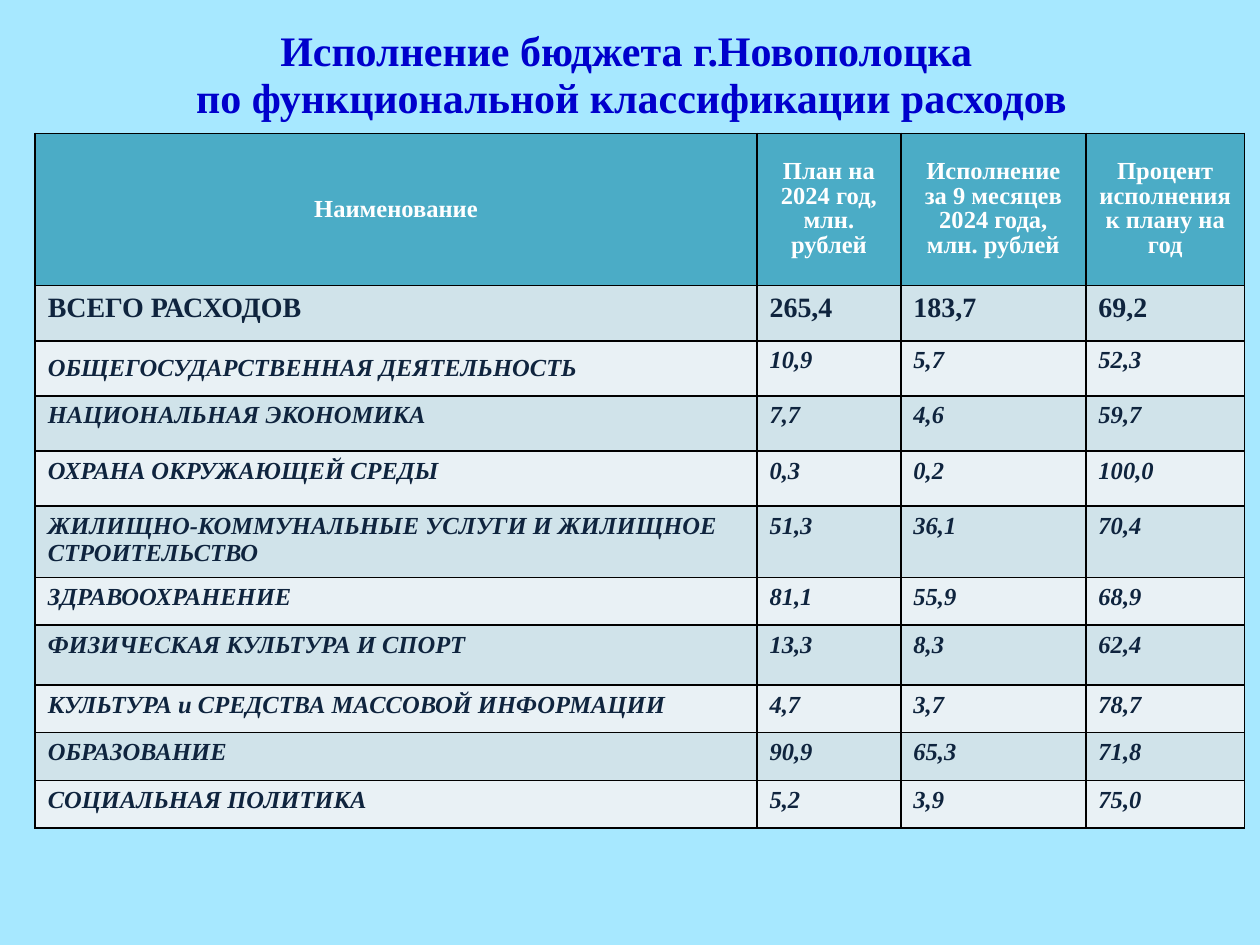
import pptx
import pptx.util
import pptx.dml.color
import pptx.enum.text
import pptx.oxml
import pptx.oxml.ns
from pptx.util import Cm, Pt

ALIGN = pptx.enum.text.PP_ALIGN
ANCHOR = pptx.enum.text.MSO_ANCHOR


def rgb(value):
    return pptx.dml.color.RGBColor.from_string(value)


def set_font(p, size, color, italic=False):
    p.font.name = "Times New Roman"
    p.font.size = Pt(size)
    p.font.bold = True
    p.font.italic = italic
    p.font.color.rgb = rgb(color)


prs = pptx.Presentation()
prs.slide_width = Cm(25.4)
prs.slide_height = Cm(19.05)
s = prs.slides.add_slide(prs.slide_layouts[6])
s.background.fill.solid()
s.background.fill.fore_color.rgb = rgb("A7E8FF")

sp = s.shapes.add_textbox(Cm(1.3), Cm(0.33), Cm(22.86), Cm(2.36))
tf = sp.text_frame
tf.word_wrap = True
tf.vertical_anchor = ANCHOR.MIDDLE
p = tf.paragraphs[0]
p.text = "Исполнение бюджета г.Новополоцка \vпо функциональной классификации расходов"
p.alignment = ALIGN.CENTER
p.line_spacing = Pt(27)
set_font(p, 24, "0000CC")

rows = [
    ("Наименование", "План на 2024 год, млн. рублей",
     "Исполнение за 9 месяцев 2024 года, млн. рублей", "Процент исполнения к плану на год"),
    ("ВСЕГО РАСХОДОВ", "265,4", "183,7", "69,2"),
    ("ОБЩЕГОСУДАРСТВЕННАЯ ДЕЯТЕЛЬНОСТЬ", "10,9", "5,7", "52,3"),
    ("НАЦИОНАЛЬНАЯ ЭКОНОМИКА", "7,7", "4,6", "59,7"),
    ("ОХРАНА ОКРУЖАЮЩЕЙ СРЕДЫ", "0,3", "0,2", "100,0"),
    ("ЖИЛИЩНО-КОММУНАЛЬНЫЕ УСЛУГИ И ЖИЛИЩНОЕ СТРОИТЕЛЬСТВО", "51,3", "36,1", "70,4"),
    ("ЗДРАВООХРАНЕНИЕ", "81,1", "55,9", "68,9"),
    ("ФИЗИЧЕСКАЯ КУЛЬТУРА И СПОРТ", "13,3", "8,3", "62,4"),
    ("КУЛЬТУРА и СРЕДСТВА МАССОВОЙ ИНФОРМАЦИИ", "4,7", "3,7", "78,7"),
    ("ОБРАЗОВАНИЕ", "90,9", "65,3", "71,8"),
    ("СОЦИАЛЬНАЯ ПОЛИТИКА", "5,2", "3,9", "75,0"),
]
widths = [14.55, 2.9, 3.73, 3.2]
heights = [3.07] + [1.11] * 4 + [1.35, 0.96, 1.21] + [0.96] * 3

table = s.shapes.add_table(len(rows), len(widths), Cm(0.71), Cm(2.69),
                           Cm(sum(widths)), Cm(sum(heights))).table
for column, width in zip(table.columns, widths):
    column.width = Cm(width)

for i, (row, height) in enumerate(zip(rows, heights)):
    table.rows[i].height = Cm(height)
    for j, text in enumerate(row):
        cell = table.cell(i, j)
        tcPr = cell._tc.get_or_add_tcPr()
        for side in ("lnL", "lnR", "lnT", "lnB"):
            tcPr.append(pptx.oxml.parse_xml(
                f'<a:{side} {pptx.oxml.ns.nsdecls("a")} w="12700"><a:solidFill>'
                f'<a:srgbClr val="000000"/></a:solidFill></a:{side}>'))
        cell.fill.solid()
        p = cell.text_frame.paragraphs[0]
        p.text = text
        if i == 0:
            cell.fill.fore_color.rgb = rgb("4BACC6")
            cell.vertical_anchor = ANCHOR.MIDDLE
            p.alignment = ALIGN.CENTER
            if j > 0:
                p.line_spacing = Pt(14)
            set_font(p, 14, "FFFFFF")
        else:
            cell.fill.fore_color.rgb = rgb("D0E3EA" if i % 2 else "E9F1F5")
            set_font(p, 16 if i == 1 else 14, "0F243E", italic=i > 1)

table.cell(2, 0).vertical_anchor = ANCHOR.MIDDLE

prs.save("out.pptx")
